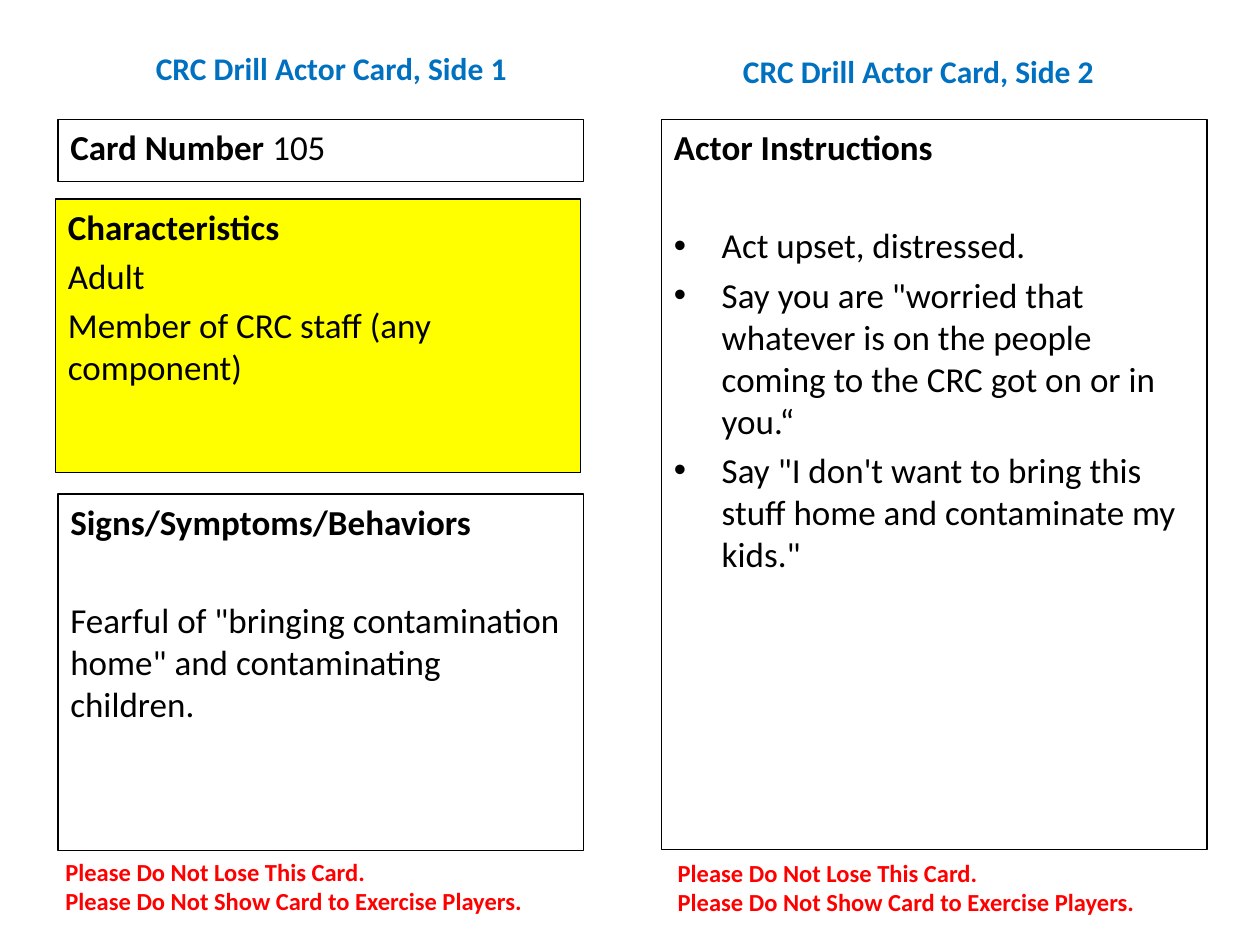
from lxml.etree import SubElement
from pptx import Presentation
from pptx.dml.color import RGBColor
from pptx.enum.shapes import MSO_SHAPE
from pptx.enum.text import MSO_ANCHOR, MSO_AUTO_SIZE, PP_ALIGN
from pptx.oxml.ns import qn
from pptx.util import Inches, Pt

THEME = {
    "font": "Calibri",
    "line": RGBColor(0, 0, 0),
    "line_width": Pt(0.75),
    "highlight": RGBColor(255, 255, 0),
    "title": {"size": Pt(18), "color": RGBColor(0, 0x70, 0xC0)},
    "body": {"size": Pt(20), "color": RGBColor(0, 0, 0)},
    "notice": {"size": Pt(14), "color": RGBColor(255, 0, 0)},
}
SPACE, SECTION_SPACE = Pt(4), Pt(32)
INDENT = Inches(0.38)
SIZE = Inches(10), Inches(7.5)

TITLES = [
    ((4.2, 2, 44.2, 10.4), "CRC Drill Actor Card, Side 1"),
    ((50.8, 2.27, 44.2, 10.4), "CRC Drill Actor Card, Side 2"),
]
PANELS = [
    {"area": (4.6, 12.67, 41.7, 6.53), "head": "Card Number ", "value": "105"},
    {"area": (4.4, 21.07, 41.7, 28.93), "head": "Characteristics",
     "items": ["Adult", "Member of CRC staff (any component)"], "fill": True},
    {"area": (4.6, 52.27, 41.7, 37.73), "head": "Signs/Symptoms/Behaviors",
     "items": ['Fearful of "bringing contamination home" and contaminating children.'],
     "gap": SECTION_SPACE},
    {"area": (52.5, 12.67, 43.3, 77.2), "head": "Actor Instructions",
     "items": [
         "Act upset, distressed.",
         'Say you are "worried that whatever is on the people coming to the CRC got on or in you.“',
         'Say "I don\'t want to bring this stuff home and contaminate my kids."',
     ], "gap": SECTION_SPACE, "bullets": True},
]
NOTICE = ["Please Do Not Lose This Card.", "Please Do Not Show Card to Exercise Players."]
NOTICE_AREAS = [(4.2, 90, 42.1, 7.6), (52.8, 90.13, 42.1, 7.6)]


def place(area):
    return [round(SIZE[i % 2] * share / 100) for i, share in enumerate(area)]


def apply(target, values):
    for name, value in values.items():
        setattr(target, name, value)


def add_run(p, text, style, bold):
    r = p.add_run()
    r.text = text
    apply(r.font, {"name": THEME["font"], "size": THEME[style]["size"], "bold": bold})
    r.font.color.rgb = THEME[style]["color"]


def add_bullet(p):
    pPr = p._p.get_or_add_pPr()
    pPr.set("marL", str(INDENT))
    pPr.set("indent", str(-INDENT))
    SubElement(pPr, qn("a:buFont")).set("typeface", "Arial")
    SubElement(pPr, qn("a:buChar")).set("char", "•")


def add_label(slide, area, lines, style, frame, align):
    tf = slide.shapes.add_textbox(*place(area)).text_frame
    apply(tf, {"word_wrap": True, **frame})
    for i, line in enumerate(lines):
        p = tf.add_paragraph() if i else tf.paragraphs[0]
        p.alignment = align
        add_run(p, line, style, True)


def add_panel(slide, panel):
    sp = slide.shapes.add_shape(MSO_SHAPE.RECTANGLE, *place(panel["area"]))
    sp.shadow.inherit = False
    if panel.get("fill"):
        sp.fill.solid()
        sp.fill.fore_color.rgb = THEME["highlight"]
    else:
        sp.fill.background()
    sp.line.color.rgb = THEME["line"]
    sp.line.width = THEME["line_width"]
    tf = sp.text_frame
    apply(tf, {"word_wrap": True, "vertical_anchor": MSO_ANCHOR.TOP})
    p = tf.paragraphs[0]
    p.alignment = PP_ALIGN.LEFT
    add_run(p, panel["head"], "body", True)
    if "value" in panel:
        add_run(p, panel["value"], "body", False)
    for i, item in enumerate(panel.get("items", [])):
        p = tf.add_paragraph()
        space = SPACE if i else panel.get("gap", SPACE)
        apply(p, {"alignment": PP_ALIGN.LEFT, "space_before": space})
        if panel.get("bullets"):
            add_bullet(p)
        add_run(p, item, "body", False)


def main():
    prs = Presentation()
    prs.slide_width, prs.slide_height = SIZE
    slide = prs.slides.add_slide(prs.slide_layouts[6])
    for area, title in TITLES:
        add_label(slide, area, [title], "title",
                  {"vertical_anchor": MSO_ANCHOR.MIDDLE}, PP_ALIGN.CENTER)
    for panel in PANELS:
        add_panel(slide, panel)
    for area in NOTICE_AREAS:
        add_label(slide, area, NOTICE, "notice",
                  {"auto_size": MSO_AUTO_SIZE.SHAPE_TO_FIT_TEXT}, PP_ALIGN.LEFT)
    prs.save("out.pptx")


if __name__ == "__main__":
    main()
